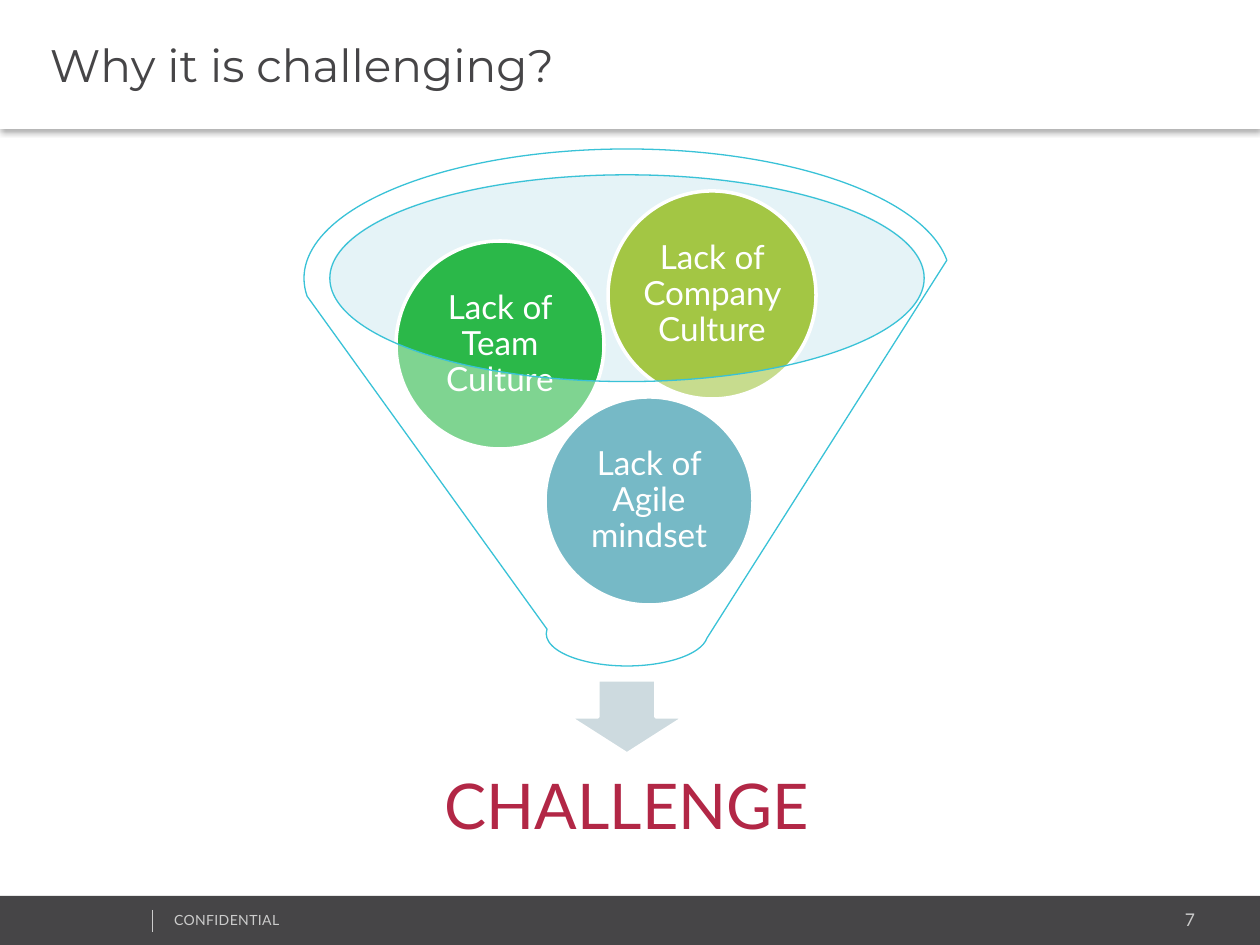
from dataclasses import dataclass

from lxml import etree
from pptx import Presentation
from pptx.dml.color import RGBColor
from pptx.enum import shapes, text
from pptx.oxml import ns
from pptx.util import Emu, Pt

EMU_PER_PX = 914400 / 126

WHITE = RGBColor(0xFF, 0xFF, 0xFF)
CHARCOAL = RGBColor(0x46, 0x45, 0x47)
LIGHT_GREY = RGBColor(0xCC, 0xCC, 0xCC)
ARROW_GREY = RGBColor(0xCD, 0xDA, 0xDF)
PALE_BLUE = RGBColor(0xBF, 0xE3, 0xEC)
CYAN = RGBColor(0x39, 0xC2, 0xD7)
TEAL = RGBColor(0x1B, 0x8B, 0xA0)
GREEN = RGBColor(0x2B, 0xB8, 0x49)
LIME = RGBColor(0xA3, 0xC6, 0x44)
CRIMSON = RGBColor(0xB2, 0x27, 0x46)

Shape = shapes.MSO_SHAPE
Align = text.PP_ALIGN
Anchor = text.MSO_ANCHOR


@dataclass(frozen=True)
class Box:
    left: int
    top: int
    width: int
    height: int

    def emu(self) -> list[Emu]:
        return [px(n) for n in (self.left, self.top, self.width, self.height)]


@dataclass(frozen=True)
class Style:
    size: float
    color: RGBColor
    font: str = "Lato"
    align: Align = Align.LEFT
    anchor: Anchor = Anchor.TOP
    line_spacing: float = 1.0
    tracking: int = 0  # hundredths of a point


@dataclass(frozen=True)
class Cause:
    label: str
    left: int
    top: int
    color: RGBColor


CAUSE_SIZE = 208
CAUSE_STYLE = Style(19, WHITE, align=Align.CENTER, anchor=Anchor.MIDDLE, line_spacing=0.9)
CAUSES = [
    Cause("Lack of Agile mindset", 545, 397, TEAL),
    Cause("Lack of Team Culture", 396, 241, GREEN),
    Cause("Lack of Company Culture", 608, 191, LIME),
]


def px(n: int) -> Emu:
    return Emu(round(n * EMU_PER_PX))


def add_shape(slide, kind: Shape, box: Box, fill: RGBColor, alpha: int = 100,
              line: RGBColor | None = None, line_width: float = 0):
    """Add a shadowless preset shape; alpha is the fill's opacity in percent."""
    shape = slide.shapes.add_shape(kind, *box.emu())
    shape.shadow.inherit = False
    shape.fill.solid()
    shape.fill.fore_color.rgb = fill
    if alpha < 100:
        color = shape._element.spPr.find(ns.qn("a:solidFill"))[0]
        etree.SubElement(color, ns.qn("a:alpha"), val=str(alpha * 1000))
    if line is None:
        shape.line.fill.background()
    else:
        shape.line.color.rgb = line
        shape.line.width = Pt(line_width)
    return shape


def write(shape, words: str, style: Style,
          insets: tuple[int, int, int, int] = (13, 6, 13, 6)) -> None:
    """Fill a shape with one run; insets are left, top, right, bottom."""
    frame = shape.text_frame
    frame.word_wrap = True
    frame.vertical_anchor = style.anchor
    (frame.margin_left, frame.margin_top,
     frame.margin_right, frame.margin_bottom) = map(px, insets)
    paragraph = frame.paragraphs[0]
    paragraph.alignment = style.align
    paragraph.line_spacing = style.line_spacing
    run = paragraph.add_run()
    run.text = words
    run.font.name = style.font
    run.font.size = Pt(style.size)
    run.font.color.rgb = style.color
    if style.tracking:
        run._r.get_or_add_rPr().set("spc", str(style.tracking))


def add_bottom_shadow(shape) -> None:
    effects = shape._element.spPr.find(ns.qn("a:effectLst"))
    shadow = etree.SubElement(
        effects, ns.qn("a:outerShdw"), blurRad=str(Pt(3.1)), dist=str(Pt(2)),
        dir="5400000", algn="t", rotWithShape="0")
    color = etree.SubElement(shadow, ns.qn("a:srgbClr"), val="000000")
    etree.SubElement(color, ns.qn("a:alpha"), val="30000")


def add_footer(slide) -> None:
    add_shape(slide, Shape.RECTANGLE, Box(0, 896, 1260, 50), CHARCOAL)
    number = slide.shapes.add_textbox(*Box(1003, 903, 205, 34).emu())
    write(number, "7", Style(10, LIGHT_GREY, align=Align.RIGHT))
    notice = slide.shapes.add_textbox(*Box(161, 905, 319, 30).emu())
    write(notice, "CONFIDENTIAL", Style(8, LIGHT_GREY, tracking=20))
    divider = slide.shapes.add_connector(
        shapes.MSO_CONNECTOR.STRAIGHT, px(152), px(910), px(152), px(932))
    divider.line.color.rgb = LIGHT_GREY
    divider.line.width = Pt(0.25)
    etree.SubElement(divider._element.spPr, ns.qn("a:effectLst"))


def add_funnel(slide) -> None:
    add_shape(slide, Shape.OVAL, Box(329, 174, 596, 207), PALE_BLUE, alpha=40)
    add_shape(slide, Shape.DOWN_ARROW, Box(569, 680, 116, 74), ARROW_GREY,
              line=WHITE, line_width=2)
    outcome = slide.shapes.add_textbox(*Box(350, 740, 554, 139).emu())
    write(outcome, "CHALLENGE",
          Style(36, CRIMSON, align=Align.CENTER, anchor=Anchor.MIDDLE, line_spacing=0.9),
          insets=(35, 35, 35, 35))
    for cause in CAUSES:
        circle = add_shape(slide, Shape.OVAL,
                           Box(cause.left, cause.top, CAUSE_SIZE, CAUSE_SIZE),
                           cause.color, line=WHITE, line_width=2)
        write(circle, cause.label, CAUSE_STYLE, insets=(4, 4, 4, 4))
    add_shape(slide, Shape.FUNNEL, Box(304, 149, 646, 517), WHITE, alpha=40,
              line=CYAN, line_width=0.75)


def add_title(slide) -> None:
    banner = add_shape(slide, Shape.RECTANGLE, Box(0, 0, 1260, 129), WHITE)
    add_bottom_shadow(banner)
    write(banner, "Why it is challenging?",
          Style(26, CHARCOAL, font="Montserrat", anchor=Anchor.MIDDLE),
          insets=(50, 6, 13, 6))


def main() -> None:
    deck = Presentation()
    deck.slide_width, deck.slide_height = px(1260), px(945)
    slide = deck.slides.add_slide(deck.slide_layouts[6])
    add_footer(slide)
    add_funnel(slide)
    add_title(slide)
    deck.save("out.pptx")


if __name__ == "__main__":
    main()
